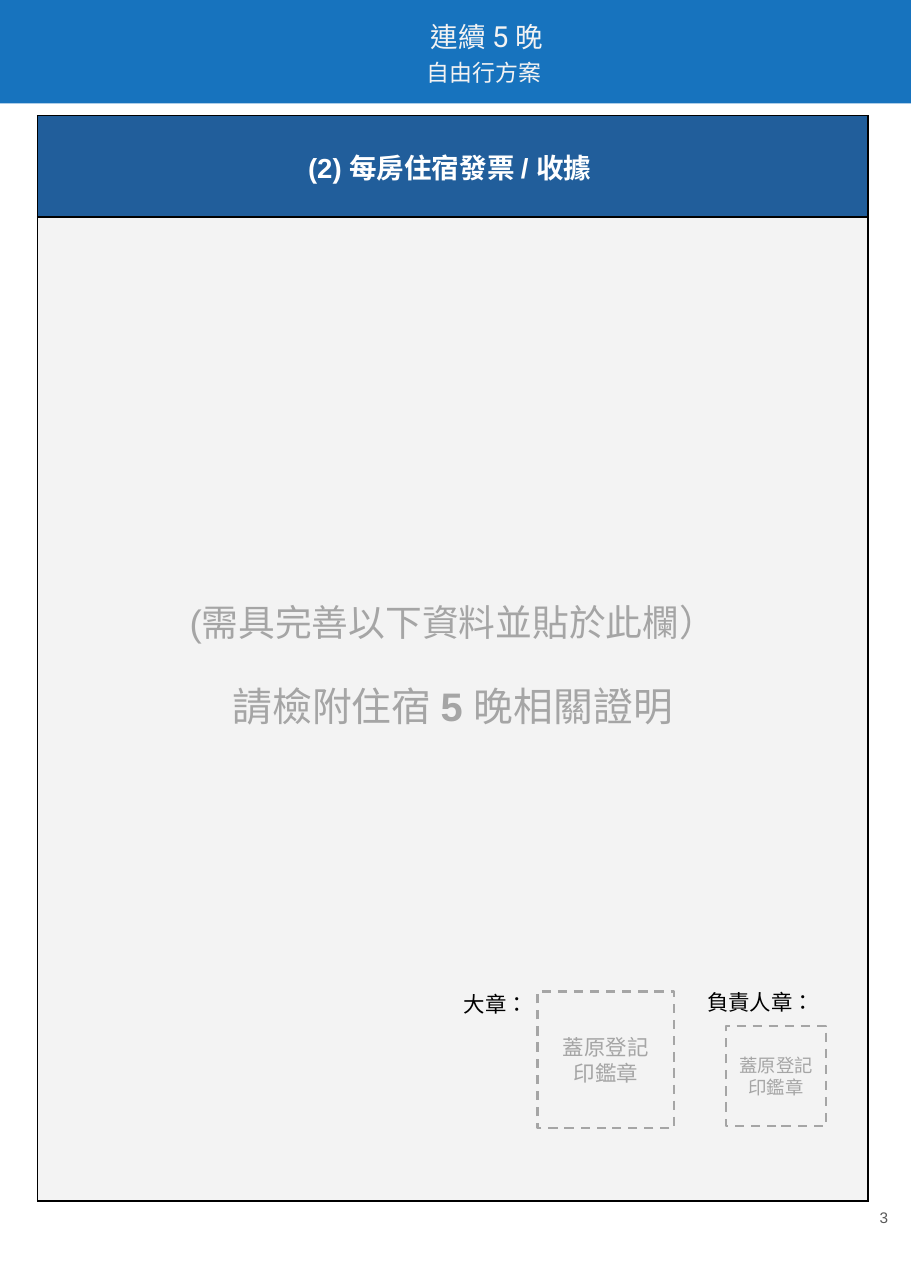
from dataclasses import dataclass

from lxml import etree
from pptx import Presentation
from pptx.dml.color import RGBColor
from pptx.enum.dml import MSO_LINE
from pptx.enum.lang import MSO_LANGUAGE_ID
from pptx.enum.shapes import MSO_SHAPE
from pptx.enum.text import MSO_ANCHOR, MSO_AUTO_SIZE, PP_ALIGN
from pptx.oxml.ns import qn
from pptx.util import Inches, Pt

RECTANGLE = MSO_SHAPE.RECTANGLE
DASH = MSO_LINE.DASH
TOP, MIDDLE = MSO_ANCHOR.TOP, MSO_ANCHOR.MIDDLE
LEFT, CENTER, RIGHT = PP_ALIGN.LEFT, PP_ALIGN.CENTER, PP_ALIGN.RIGHT
NO_AUTOFIT = MSO_AUTO_SIZE.NONE
CHINESE = MSO_LANGUAGE_ID.TRADITIONAL_CHINESE
TITLE_ONLY = 5


@dataclass(frozen=True)
class Theme:
    body_font: str = "Arial"
    title_font: str = "Roboto"
    band: str = "1773BE"
    heading_fill: str = "215E9B"
    panel: str = "F3F3F3"
    white: str = "FFFFFF"
    black: str = "000000"
    hint: str = "A5A5A5"
    page_grey: str = "595959"
    title: int = 18
    title_digit: int = 19
    subtitle: int = 15
    hint_size: int = 24
    proof_size: int = 26
    label: int = 14
    small_seal: int = 12
    page: int = 10


THEME = Theme()


def inches(*box):
    return [Inches(length) for length in box]


def fill_solid(part, color):
    part.fill.solid()
    part.fill.fore_color.rgb = RGBColor.from_string(color)


def write(frame, paragraphs, color, font=THEME.body_font, align=CENTER,
          anchor=MIDDLE, spacing=None, inset_y=0.05):
    """Fill a frame; each paragraph is a list of (text, size, bold) runs."""
    layout = {"word_wrap": True, "auto_size": NO_AUTOFIT, "vertical_anchor": anchor,
              "margin_left": Inches(0.1), "margin_right": Inches(0.1),
              "margin_top": Inches(inset_y), "margin_bottom": Inches(inset_y)}
    for name, value in layout.items():
        setattr(frame, name, value)
    for index, pieces in enumerate(paragraphs):
        paragraph = frame.add_paragraph() if index else frame.paragraphs[0]
        paragraph.alignment = align
        paragraph.line_spacing = spacing
        for text, size, bold in pieces:
            run = paragraph.add_run()
            run.text = text
            run.font.color.rgb = RGBColor.from_string(color)
            style = {"name": font, "size": Pt(size), "bold": bold,
                     "language_id": CHINESE}
            for name, value in style.items():
                setattr(run.font, name, value)


def add_header(slide, left, top, width, height):
    band = slide.shapes.add_shape(RECTANGLE, *inches(left, top, width, height))
    band.shadow.inherit = False
    fill_solid(band, THEME.band)
    band.line.fill.background()

    title = slide.shapes.title
    title.left, title.top, title.width, title.height = inches(
        left + 2.4, top + 0.07, 4.04, 0.94)
    title._element.addprevious(band._element)
    write(title.text_frame,
          [[("連續 ", THEME.title, False), ("5", THEME.title_digit, False),
            (" 晚", THEME.title, False)],
           [("自由行方案", THEME.subtitle, False), (" ", THEME.title, False)]],
          THEME.panel, font=THEME.title_font, anchor=TOP, inset_y=0.1)


def outline_cell(cell):
    properties = cell._tc.get_or_add_tcPr()
    for position, side in enumerate(("a:lnL", "a:lnR", "a:lnT", "a:lnB")):
        line = etree.Element(qn(side), w=str(Pt(1)))
        solid = etree.SubElement(line, qn("a:solidFill"))
        etree.SubElement(solid, qn("a:srgbClr"), val=THEME.black)
        properties.insert(position, line)


def add_receipt_table(slide, left, top, width, height):
    heading_height = 0.92
    table = slide.shapes.add_table(2, 1, *inches(left, top, width, height)).table
    table.rows[0].height = Inches(heading_height)
    table.rows[1].height = Inches(height - heading_height)
    heading, paste_area = table.cell(0, 0), table.cell(1, 0)
    for cell, color in ((heading, THEME.heading_fill), (paste_area, THEME.panel)):
        fill_solid(cell, color)
        outline_cell(cell)
        cell.vertical_anchor = MIDDLE
    write(heading.text_frame,
          [[("(2) 每房住宿發票 / 收據 ", THEME.title, True)]], THEME.white)
    write(paste_area.text_frame,
          [[("(需具完善以下資料並貼於此欄）", THEME.hint_size, False)],
           [("請檢附住宿 ", THEME.proof_size, False), ("5", THEME.proof_size, True),
            (" 晚相關證明", THEME.proof_size, False)]],
          THEME.hint, spacing=1.5)
    paste_area.margin_bottom = Inches(1.12)


def add_text(slide, left, top, width, height, text, size, color, **style):
    box = slide.shapes.add_textbox(*inches(left, top, width, height))
    write(box.text_frame, [[(text, size, False)]], color, **style)


def add_seal(slide, left, top, side, size):
    """Dashed square in which a registered seal is stamped."""
    seal = slide.shapes.add_shape(RECTANGLE, *inches(left, top, side, side))
    seal.shadow.inherit = False
    seal.fill.background()
    seal.line.color.rgb = RGBColor.from_string(THEME.hint)
    seal.line.width = Pt(1.5)
    seal.line.dash_style = DASH
    write(seal.text_frame,
          [[(line, size, False)] for line in ("蓋原登記", "印鑑章")], THEME.hint)


def add_seal_area(slide, left, top):
    labels = (("大章：", 0, 0.02), ("負責人章：", 2.21, 0))
    for label, across, down in labels:
        add_text(slide, left + across, top + down, 1.18, 0.34, label,
                 THEME.label, THEME.black, align=LEFT, anchor=TOP)
    add_seal(slide, left + 0.77, top + 0.07, 1.24, THEME.label)
    add_seal(slide, left + 2.48, top + 0.38, 0.91, THEME.small_seal)


def main():
    presentation = Presentation()
    presentation.slide_width, presentation.slide_height = inches(8.27, 11.69)
    slide = presentation.slides.add_slide(presentation.slide_layouts[TITLE_ONLY])
    add_header(slide, 0, 0, 8.27, 0.94)
    add_receipt_table(slide, 0.34, 1.05, 7.54, 9.85)
    add_text(slide, 7.66, 10.6, 0.5, 0.89, "3", THEME.page, THEME.page_grey,
             align=RIGHT)
    add_seal_area(slide, 4.11, 8.93)
    presentation.save("out.pptx")


if __name__ == "__main__":
    main()
